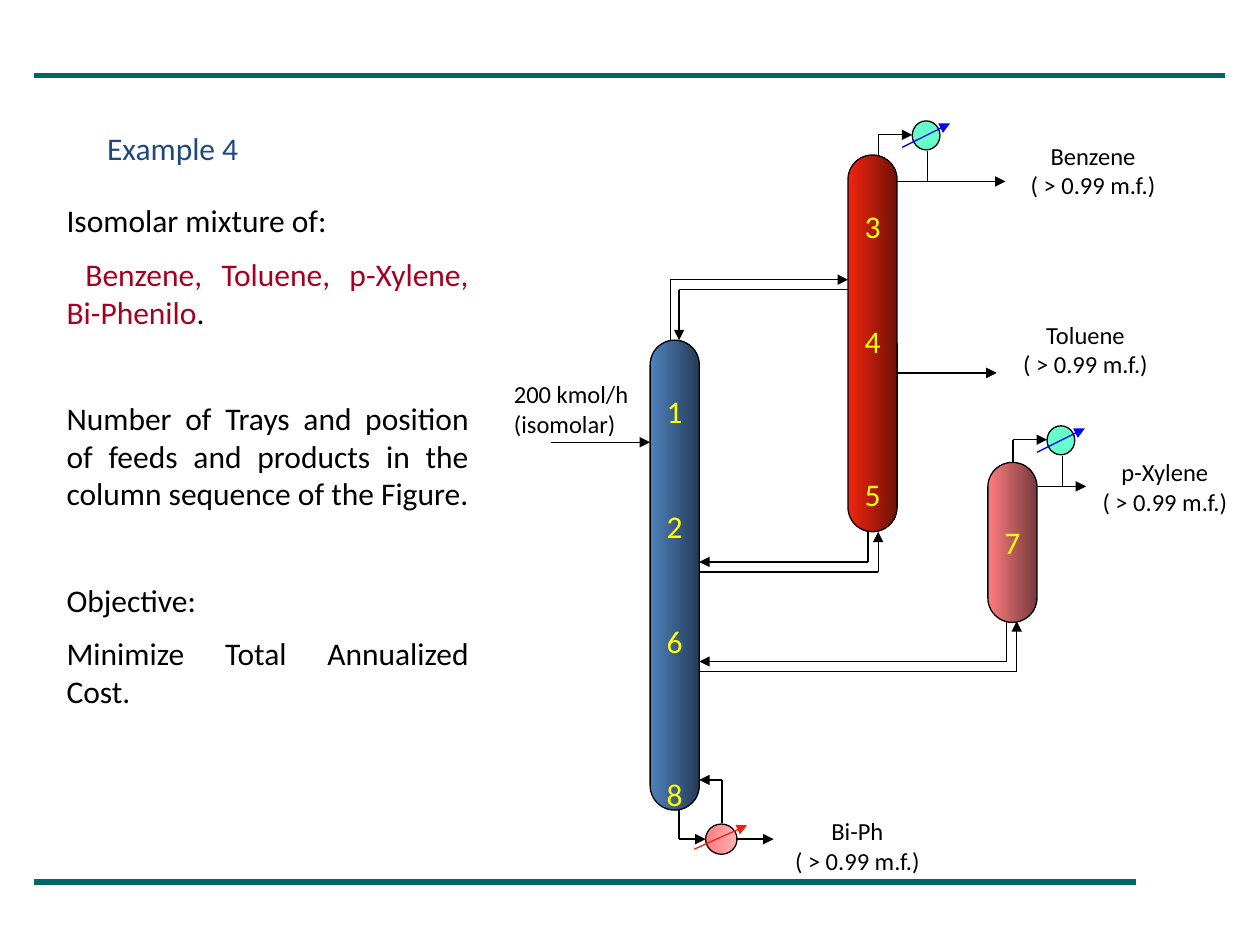
import pptx
import pptx.util
import pptx.dml.color
import pptx.enum.shapes
import pptx.enum.text
import pptx.oxml.ns
import lxml.etree

Inches = pptx.util.Inches
Pt = pptx.util.Pt
SHAPE = pptx.enum.shapes.MSO_SHAPE
ALIGN = pptx.enum.text.PP_ALIGN
ANCHOR = pptx.enum.text.MSO_ANCHOR
BLACK, YELLOW, CRIMSON = "000000", "FFFF00", "A50021"
PURITY = "( > 0.99 m.f.)"
LINE_HEIGHT = 22  # points, one line of 18 pt text


def colour(value):
    return pptx.dml.color.RGBColor.from_string(value)


def style(span, size, value):
    span.font.name = "Calibri"
    span.font.size = Pt(size)
    span.font.color.rgb = colour(value)


def add_line(page, start, end, value=BLACK, width=0.75, arrow=False):
    line = page.shapes.add_connector(
        pptx.enum.shapes.MSO_CONNECTOR.STRAIGHT,
        *[Inches(number) for number in (*start, *end)])
    line.line.color.rgb = colour(value)
    line.line.width = Pt(width)
    properties = line._element.spPr
    if arrow:
        head = lxml.etree.SubElement(line.line._get_or_add_ln(),
                                     pptx.oxml.ns.qn("a:tailEnd"))
        head.set("type", "triangle")
    lxml.etree.SubElement(properties, pptx.oxml.ns.qn("a:effectLst"))


def add_pipe(page, *points, arrow=True):
    """Straight legs through the points, with an arrowhead on the last."""
    for index, (start, end) in enumerate(zip(points, points[1:]), 2):
        add_line(page, start, end, arrow=arrow and index == len(points))


def add_body(page, kind, area, colours):
    """Outlined shape, filled plainly or with a left-to-right gradient."""
    shape = page.shapes.add_shape(kind, *[Inches(number) for number in area])
    shape.shadow.inherit = False
    shape.line.color.rgb = colour(BLACK)
    shape.line.width = Pt(0.75)
    if len(colours) == 1:
        shape.fill.solid()
        shape.fill.fore_color.rgb = colour(colours[0])
    else:
        shape.fill.gradient()
        shape.fill.gradient_angle = 0
        for position, (stop, value) in enumerate(
                zip(shape.fill.gradient_stops, colours)):
            stop.color.rgb = colour(value)
            stop.position = position
    return shape


def add_column(page, left, top, height, colours, sections, middle=False):
    """Distillation column; sections are (number, blank lines above it)."""
    column = add_body(page, SHAPE.ROUNDED_RECTANGLE,
                      (left, top, 0.39, height), colours)
    column.adjustments[0] = 0.5
    frame = column.text_frame
    frame.word_wrap = False
    frame.vertical_anchor = ANCHOR.MIDDLE if middle else ANCHOR.TOP
    if not middle:
        frame.margin_top = Inches(0.05) + Pt(LINE_HEIGHT)
    frame.text = "\n".join(number for number, _ in sections)
    for para, (_, gap) in zip(frame.paragraphs, sections):
        para.alignment = ALIGN.CENTER
        if gap:
            para.space_before = Pt(gap * LINE_HEIGHT)
        style(para.runs[0], 18, YELLOW)


def add_condenser(page, x, y, product_end):
    """Overhead condenser; x, y is the elbow above the column."""
    add_body(page, SHAPE.OVAL, (x + 0.27, y - 0.11, 0.22, 0.23), ["66FFCC"])
    add_line(page, (x + 0.19, y + 0.1), (x + 0.57, y - 0.09),
             "0000FF", arrow=True)
    add_pipe(page, (x, y + 0.24), (x, y), (x + 0.27, y))
    add_pipe(page, (x + 0.39, y + 0.13), (x + 0.39, y + 0.37), arrow=False)
    add_pipe(page, (x + 0.09, y + 0.37), (product_end, y + 0.37))


def add_reboiler(page):
    add_body(page, SHAPE.OVAL, (5.6, 6.54, 0.25, 0.24), ["FF7C80", "FFB2B3"])
    add_line(page, (5.51, 6.74), (5.93, 6.55), "F1250F", arrow=True)
    add_pipe(page, (5.39, 6.43), (5.39, 6.66), (5.6, 6.66))
    add_pipe(page, (5.84, 6.66), (6.14, 6.66))
    add_pipe(page, (5.73, 6.53), (5.73, 6.19), (5.55, 6.19))


def add_label(page, left, top, width, lines, alignment=ALIGN.CENTER):
    box = page.shapes.add_textbox(Inches(left), Inches(top),
                                  Inches(width), Inches(0.57))
    frame = box.text_frame
    frame.word_wrap = False
    frame.text = "\n".join(lines)
    for para in frame.paragraphs:
        para.alignment = alignment
        style(para.runs[0], 14, BLACK)


def add_title(page):
    title = page.shapes.title
    title.left, title.top = Inches(0.75), Inches(0.97)
    title.width, title.height = Inches(1.28), Inches(0.4)
    frame = title.text_frame
    frame.text = "Example 4"
    frame.word_wrap = False
    frame.vertical_anchor = ANCHOR.TOP
    frame.paragraphs[0].alignment = ALIGN.LEFT
    style(frame.paragraphs[0].runs[0], 18, "1F497D")


def add_statement(page):
    """Problem text: (space before in points, runs) for each paragraph."""
    content = [
        (0, [("Isomolar mixture of:", BLACK)]),
        (9, [("Benzene, Toluene, p-Xylene, Bi-Phenilo", CRIMSON),
             (".", BLACK)]),
        (39, [("Number of Trays and position of feeds and products in the "
               "column sequence of the Figure.", BLACK)]),
        (39, [("Objective:", BLACK)]),
        (9, [("Minimize Total Annualized Cost.", BLACK)]),
    ]
    box = page.shapes.add_textbox(Inches(0.43), Inches(1.55),
                                  Inches(3.39), Inches(4.5))
    frame = box.text_frame
    frame.word_wrap = True
    for index, (gap, spans) in enumerate(content):
        para = frame.add_paragraph() if index else frame.paragraphs[0]
        para.alignment = ALIGN.JUSTIFY
        if gap:
            para.space_before = Pt(gap)
        for text, value in spans:
            span = para.add_run()
            span.text = text
            style(span, 18, value)
    # First-line indent of the list of compounds
    frame.paragraphs[1]._p.get_or_add_pPr().set("indent", str(Inches(0.15)))


def main():
    deck = pptx.Presentation()
    deck.slide_width, deck.slide_height = Inches(10), Inches(7.5)
    page = deck.slides.add_slide(deck.slide_layouts[5])

    # Rules at the top and bottom
    add_line(page, (0.27, 0.6), (9.72, 0.6), "006666", 3)
    add_line(page, (0.27, 7), (9.02, 7), "006666", 3)
    add_title(page)
    add_statement(page)

    # Feed, side product and exchanges between the columns
    add_pipe(page, (4.37, 3.51), (5.16, 3.51))
    add_pipe(page, (7.13, 2.96), (7.91, 2.96))
    add_pipe(page, (5.32, 2.7), (5.32, 2.22), (6.73, 2.22))
    add_pipe(page, (6.73, 2.3), (5.39, 2.3), (5.39, 2.7))
    for x, bottom, y in ((6.89, 4.22, 4.46), (7.99, 4.93, 5.25)):
        add_pipe(page, (x, bottom), (x, y), (5.55, y))
        add_pipe(page, (5.55, y + 0.08), (x + 0.08, y + 0.08),
                 (x + 0.08, bottom))

    # Heat exchangers
    add_reboiler(page)
    add_condenser(page, 6.97, 1.07, 7.98)
    add_condenser(page, 8.04, 3.49, 8.62)

    # Columns with their numbered sections
    add_column(page, 5.16, 2.7, 3.73, ["4F81BD", "253C57"],
               [("1", 0), ("2", 2), ("6", 2), ("8", 3)])
    add_column(page, 6.73, 1.23, 2.99, ["F1250F", "701107"],
               [("3", 0), ("4", 2), ("5", 3)])
    add_column(page, 7.84, 3.67, 1.27, ["FF7C80", "763A3C"],
               [("7", 0)], middle=True)

    # Stream labels
    for name, left, top in (("Benzene", 8.05, 1.07), ("Toluene", 7.99, 2.49),
                            ("p-Xylene", 8.62, 3.58), ("Bi-Ph", 6.18, 6.43)):
        add_label(page, left, top, 1.25, [name, PURITY])
    add_label(page, 3.98, 2.96, 1.12, ["200 kmol/h", "(isomolar)"], ALIGN.LEFT)

    deck.save("out.pptx")


if __name__ == "__main__":
    main()
